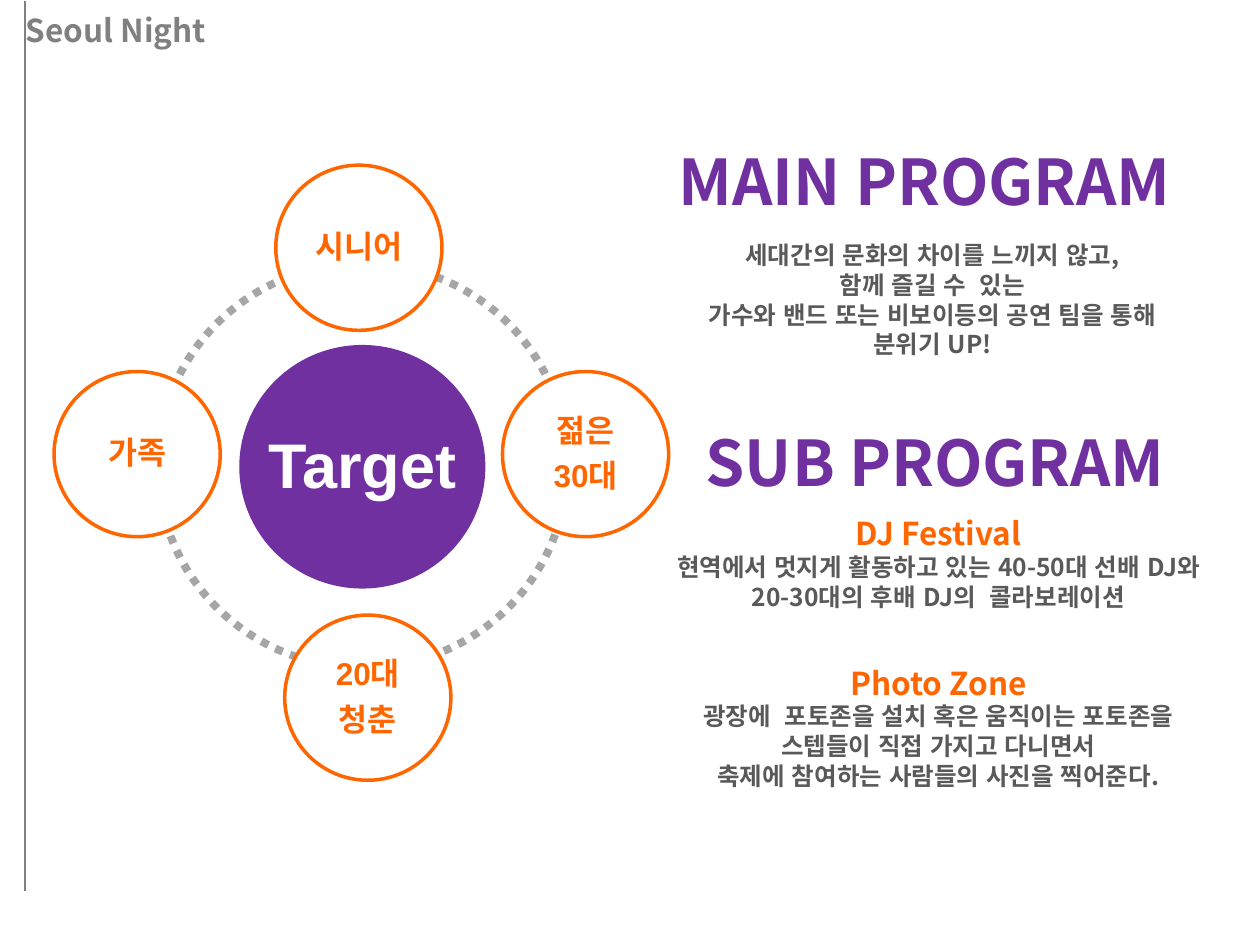
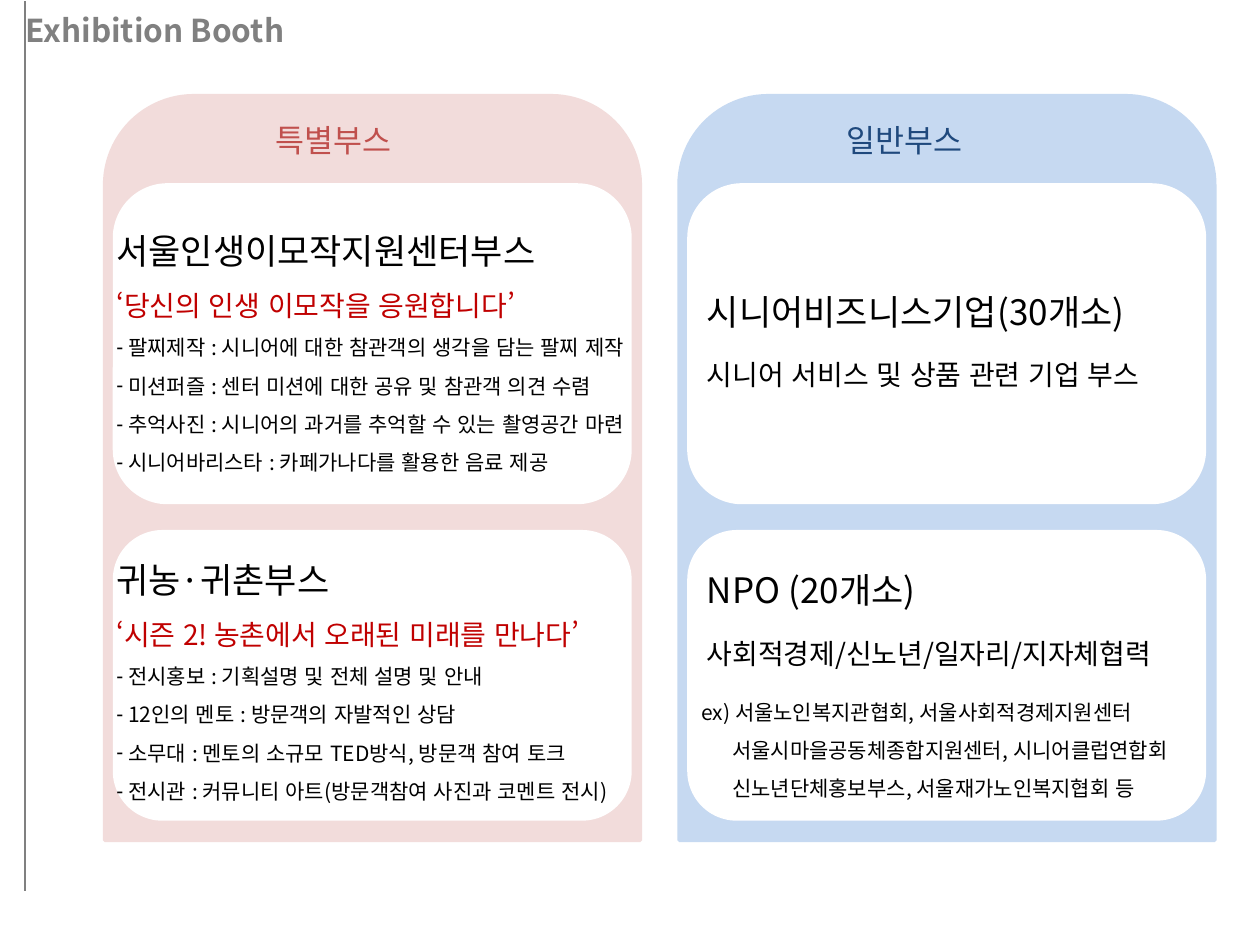
from dataclasses import dataclass
from typing import Any, NamedTuple

import lxml.etree
import pptx
import pptx.dml.color
import pptx.enum.dml
import pptx.enum.lang
import pptx.enum.shapes
import pptx.enum.text
import pptx.oxml.ns
import pptx.util

Cm, Pt = pptx.util.Cm, pptx.util.Pt
SHAPE = pptx.enum.shapes.MSO_SHAPE
ALIGN = pptx.enum.text.PP_ALIGN
ANCHOR = pptx.enum.text.MSO_ANCHOR
KOREAN = pptx.enum.lang.MSO_LANGUAGE_ID.KOREAN
qn = pptx.oxml.ns.qn

KOREAN_FONT = "Noto Sans CJK KR"
LATIN_FONT = "Arial"
PURPLE, ORANGE, WHITE, BLACK = "7030A0", "FF6600", "FFFFFF", "000000"
GRAY, TEXT_GRAY, RING_GRAY, RED = "808080", "595959", "A6A6A6", "C00000"
LINE_PITCH = 1.21  # line height of the text as a multiple of its size
HANGING = 0.24


class Box(NamedTuple):
    """Left, top, width and height in centimetres."""
    left: float
    top: float
    width: float
    height: float

    def lengths(self) -> list[int]:
        return [Cm(value) for value in self]


@dataclass
class Line:
    text: str
    size: float
    color: str = BLACK
    bold: bool = False
    spacing: float = 1
    before: float = 0
    after: float = 0
    indent: float = 0
    bullet: str = ""
    font: str = KOREAN_FONT


@dataclass
class Circle:
    box: Box
    lines: list[Line]
    fill: str
    outline: str


@dataclass
class Booth:
    left: float
    color: str
    heading: Line
    heading_left: float


def rgb(color: str) -> pptx.dml.color.RGBColor:
    return pptx.dml.color.RGBColor.from_string(color)


def write_lines(frame: Any, lines: list[Line], align: Any = ALIGN.LEFT,
                anchor: Any = ANCHOR.TOP, wrap: bool = True) -> None:
    frame.word_wrap = wrap
    frame.auto_size = pptx.enum.text.MSO_AUTO_SIZE.NONE
    frame.vertical_anchor = anchor
    for number, line in enumerate(lines):
        paragraph = frame.add_paragraph() if number else frame.paragraphs[0]
        paragraph.text = line.text
        # Korean quotation marks are narrow only when the language is known.
        paragraph.runs[0].font.language_id = KOREAN
        properties = paragraph._p.get_or_add_pPr()
        hanging = HANGING if line.bullet else 0
        properties.set("marL", str(Cm(line.indent + hanging)))
        properties.set("indent", str(Cm(-hanging)))
        if line.bullet:
            lxml.etree.SubElement(properties, qn("a:buChar")).set("char", line.bullet)
        else:
            lxml.etree.SubElement(properties, qn("a:buNone"))
        paragraph.alignment = align
        paragraph.line_spacing = Pt(round(line.size * LINE_PITCH * line.spacing, 1))
        paragraph.space_before = Pt(line.before)
        paragraph.space_after = Pt(line.after)
        paragraph.font.size = Pt(line.size)
        paragraph.font.bold = line.bold
        paragraph.font.color.rgb = rgb(line.color)
        paragraph.font.name = line.font
        east_asian = lxml.etree.SubElement(properties.find(qn("a:defRPr")), qn("a:ea"))
        east_asian.set("typeface", KOREAN_FONT)


def add_text(slide: Any, box: Box, lines: list[Line], align: Any = ALIGN.LEFT) -> None:
    write_lines(slide.shapes.add_textbox(*box.lengths()).text_frame, lines, align)


def add_panel(slide: Any, kind: Any, box: Box, fill: str, outline: str,
              weight: float = 2) -> Any:
    """Draw a preset shape; an empty fill leaves it hollow."""
    panel = slide.shapes.add_shape(kind, *box.lengths())
    panel.shadow.inherit = False
    if fill:
        panel.fill.solid()
        panel.fill.fore_color.rgb = rgb(fill)
    else:
        panel.fill.background()
    panel.line.color.rgb = rgb(outline)
    panel.line.width = Pt(weight)
    return panel


def place(placeholder: Any, box: Box) -> None:
    (placeholder.left, placeholder.top,
     placeholder.width, placeholder.height) = box.lengths()


def fill_body(slide: Any, index: int, box: Box, lines: list[Line]) -> None:
    """Move a body placeholder in front of the cards and write its list."""
    body = slide.placeholders[index]
    slide.shapes._spTree.append(body._element)
    place(body, box)
    write_lines(body.text_frame, lines)


def add_titled_slide(deck: Any, layout: str, title: str, title_width: float) -> Any:
    slide = deck.slides.add_slide(deck.slide_layouts.get_by_name(layout))
    rule = slide.shapes.add_connector(
        pptx.enum.shapes.MSO_CONNECTOR.STRAIGHT, Cm(0.51), Cm(0.03), Cm(0.51), Cm(17.96))
    rule.line.color.rgb = rgb(GRAY)
    rule.line.width = Pt(1.25)
    lxml.etree.SubElement(rule._element.spPr, qn("a:effectLst"))
    place(slide.shapes.title, Box(-0.36, 0.1, title_width, 0.99))
    frame = slide.shapes.title.text_frame
    write_lines(frame, [Line(title, 18, GRAY, True)], anchor=ANCHOR.MIDDLE)
    frame.margin_left = Cm(0.88)
    frame.margin_top = frame.margin_bottom = 0
    return slide


def add_circle(slide: Any, circle: Circle) -> None:
    disc = add_panel(slide, SHAPE.OVAL, circle.box, circle.fill, circle.outline)
    frame = disc.text_frame
    write_lines(frame, circle.lines, ALIGN.CENTER, ANCHOR.MIDDLE, wrap=False)
    frame.margin_left = frame.margin_right = frame.margin_top = frame.margin_bottom = 0


def circle_lines(texts: list[str], size: float, color: str) -> list[Line]:
    return [Line(text, size, color, True, 0.9, after=round(size * 0.35, 1), font=LATIN_FONT)
            for text in texts]


def build_seoul_night(deck: Any) -> None:
    slide = add_titled_slide(deck, "Title Only", "Seoul Night", 13.46)
    ring = add_panel(slide, SHAPE.OVAL, Box(3.18, 5.31, 8.26, 8.15), "", RING_GRAY, 4.5)
    ring.line.dash_style = pptx.enum.dml.MSO_LINE.ROUND_DOT

    add_circle(slide, Circle(Box(4.86, 6.99, 4.89, 4.84),
                             circle_lines(["Target"], 36, WHITE), PURPLE, PURPLE))
    audiences = [(5.74, 12.4, ["20대", "청춘"]), (10.13, 7.49, ["젊은", "30대"]),
                 (5.56, 3.33, ["시니어"]), (1.09, 7.49, ["가족"])]
    for left, top, texts in audiences:
        add_circle(slide, Circle(Box(left, top, 3.35, 3.33),
                                 circle_lines(texts, 18, ORANGE), WHITE, ORANGE))

    def headline(text: str) -> list[Line]:
        return [Line(text, 36, PURPLE, True)]

    def details(*texts: str) -> list[Line]:
        return [Line(text, 14, TEXT_GRAY, True) for text in texts]

    programs = [
        (Box(12.29, 2.74, 12.7, 2.24), headline("MAIN PROGRAM")),
        (Box(12.45, 4.72, 12.7, 2.64), details(
            "세대간의 문화의 차이를 느끼지 않고,",
            "함께 즐길 수  있는",
            "가수와 밴드 또는 비보이등의 공연 팀을 통해",
            "분위기 UP!")),
        (Box(12.5, 8.4, 12.7, 2.24), headline("SUB PROGRAM")),
        (Box(12.57, 10.24, 12.7, 6.4), [
            Line("DJ Festival", 18, ORANGE, True),
            *details("현역에서 멋지게 활동하고 있는 40-50대 선배 DJ와",
                     "20-30대의 후배 DJ의  콜라보레이션"),
            Line("Photo Zone", 18, ORANGE, True, before=29.6),
            *details("광장에  포토존을 설치 혹은 움직이는 포토존을",
                     "스텝들이 직접 가지고 다니면서",
                     "축제에 참여하는 사람들의 사진을 찍어준다.")]),
    ]
    for box, lines in programs:
        add_text(slide, box, lines, ALIGN.CENTER)


def special_booth(name: str, slogan: str, activities: list[str]) -> list[Line]:
    return [Line(name, 20, spacing=1.5), Line(slogan, 16, RED, spacing=1.5),
            *[Line(text, 12, spacing=1.5, bullet="-") for text in activities]]


def general_booth(name: str, description: str) -> list[Line]:
    return [Line(name, 20), Line(description, 16, before=14.5)]


def build_exhibition_booth(deck: Any) -> None:
    slide = add_titled_slide(deck, "Two Content", "Exhibition Booth", 11)
    booths = [Booth(2.11, "F2DCDB", Line("특별부스", 18, "C0504D"), 5.31),
              Booth(13.69, "C6D9F1", Line("일반부스", 18, "1F497D"), 16.81)]
    for booth in booths:
        add_panel(slide, SHAPE.ROUND_2_SAME_RECTANGLE,
                  Box(booth.left, 1.93, 10.8, 15.01), booth.color, booth.color)
        for top, height in [(3.73, 6.4), (10.72, 5.79)]:
            add_panel(slide, SHAPE.ROUNDED_RECTANGLE,
                      Box(booth.left + 0.2, top, 10.39, height), WHITE, WHITE)
        add_text(slide, Box(booth.heading_left, 2.3, 3.5, 1.02), [booth.heading])

    fill_body(slide, 1, Box(2.09, 4.06, 12.7, 5.64), special_booth(
        "서울인생이모작지원센터부스", "‘당신의 인생 이모작을 응원합니다’",
        ["팔찌제작 : 시니어에 대한 참관객의 생각을 담는 팔찌 제작",
         "미션퍼즐 : 센터 미션에 대한 공유 및 참관객 의견 수렴",
         "추억사진 : 시니어의 과거를 추억할 수 있는 촬영공간 마련",
         "시니어바리스타 : 카페가나다를 활용한 음료 제공"]))
    fill_body(slide, 2, Box(2.09, 10.69, 12.7, 5.56), special_booth(
        "귀농·귀촌부스", "‘시즌 2! 농촌에서 오래된 미래를 만나다’",
        ["전시홍보 : 기획설명 및 전체 설명 및 안내",
         "12인의 멘토 : 방문객의 자발적인 상담",
         "소무대 : 멘토의 소규모 TED방식, 방문객 참여 토크",
         "전시관 : 커뮤니티 아트(방문객참여 사진과 코멘트 전시)"]))

    add_text(slide, Box(14, 5.72, 11, 2.31), general_booth(
        "시니어비즈니스기업(30개소)", "시니어 서비스 및 상품 관련 기업 부스"))
    add_text(slide, Box(14, 11.33, 11, 2.31), general_booth(
        "NPO (20개소)", "사회적경제/신노년/일자리/지자체협력"))
    add_text(slide, Box(13.89, 13.72, 11.2, 2.46), [
        Line("ex) 서울노인복지관협회, 서울사회적경제지원센터", 12, spacing=1.5),
        *[Line(text, 12, spacing=1.5, indent=0.62) for text in (
            "서울시마을공동체종합지원센터, 시니어클럽연합회",
            "신노년단체홍보부스, 서울재가노인복지협회 등")]])


def main() -> None:
    deck = pptx.Presentation()
    deck.slide_width, deck.slide_height = Cm(25.4), Cm(19.05)
    build_seoul_night(deck)
    build_exhibition_booth(deck)
    deck.save("out.pptx")


if __name__ == "__main__":
    main()
